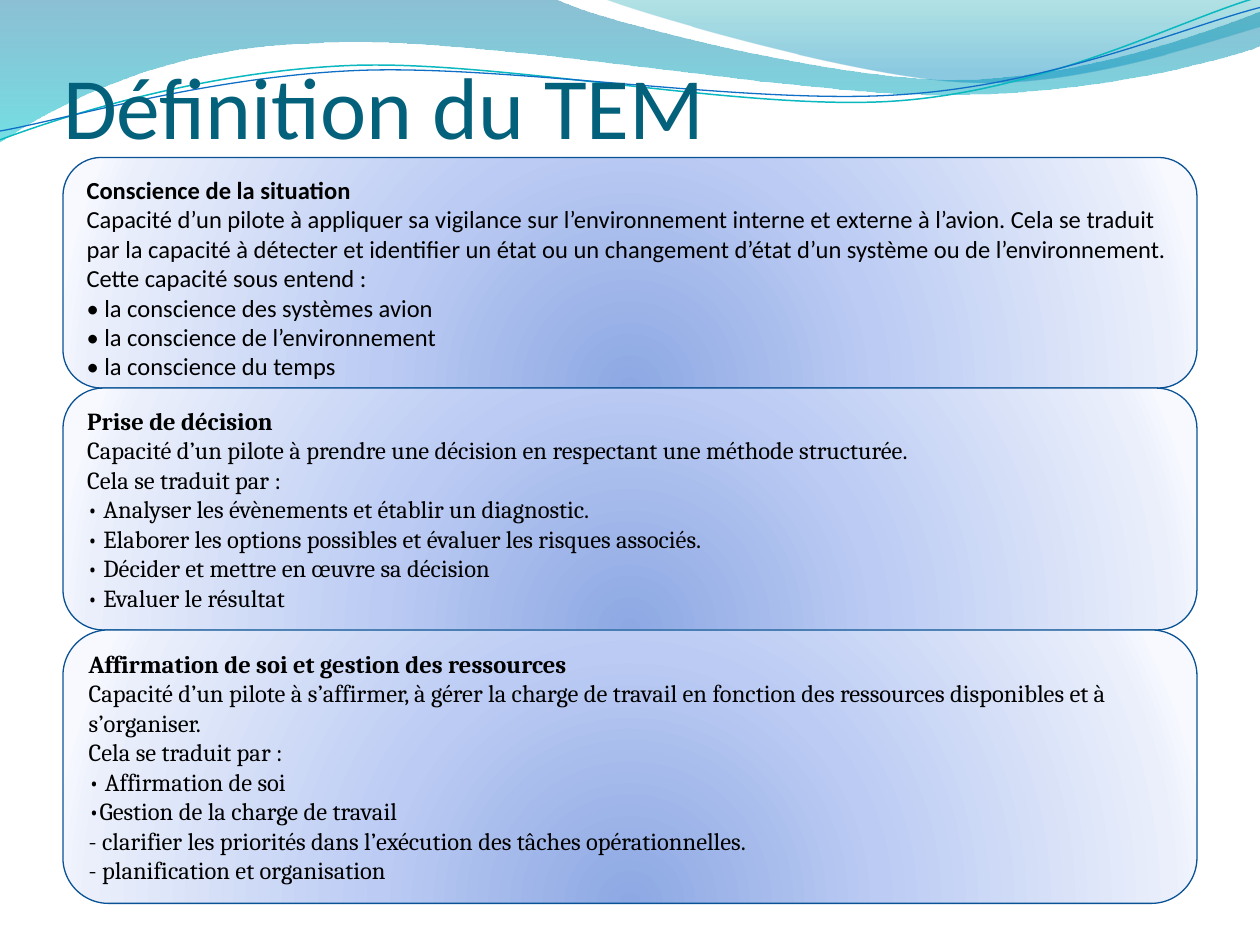
"""Build the slide « Définition du TEM »: wave header, title and three stacked definition panels."""
from math import cos, radians, sin

from pptx import Presentation
from pptx.dml.color import RGBColor as Rgb
from pptx.enum.shapes import MSO_SHAPE as Shape
from pptx.enum.text import MSO_ANCHOR as Anchor, MSO_AUTO_SIZE as AutoSize, PP_ALIGN as Align
from pptx.oxml import parse_xml
from pptx.oxml.ns import nsdecls, qn
from pptx.util import Inches, Pt

COLORS = {
    "title": "04617B", "text": "000000", "border": "095295",
    "teal_line": "0AB8BF", "blue_line": "0F6FC6",
    "deep": "0074A1", "aqua": "00C6CF", "teal": "00A1A9", "azure": "008BBF",
    "panel_core": "8DA8E3", "panel_mid": "BBCBF3", "panel_pale": "EAEFFB", "panel_edge": "F7F9FF",
}
LINEAR = '<a:lin ang="5400000" scaled="0"/>'
RADIAL = '<a:path path="circle"><a:fillToRect l="50000" t="130000" r="50000" b="-30000"/></a:path>'


def set_gradient(shape, stops, direction):
    shape.fill.background()
    stop_xml = ""
    for position, color, opacity in stops:
        alpha = f'<a:alpha val="{opacity * 1000}"/>' if opacity < 100 else ""
        stop_xml += (f'<a:gs pos="{position * 1000}"><a:srgbClr val="{COLORS[color]}">'
                     f'{alpha}</a:srgbClr></a:gs>')
    properties = shape._element.spPr
    properties.replace(properties.find(qn("a:noFill")), parse_xml(
        f'<a:gradFill {nsdecls("a")} rotWithShape="1"><a:gsLst>{stop_xml}</a:gsLst>{direction}</a:gradFill>'))


def add_wave(shapes, start, segments, closed, tilt=0, center=(0, 0)):
    points = [start] + [segment[i:i + 2] for segment in segments for i in range(0, len(segment), 2)]
    cx, cy = center
    turn = radians(-tilt)
    corners = [(Inches(cx + (x - cx) * cos(turn) - (y - cy) * sin(turn)),
                Inches(cy + (x - cx) * sin(turn) + (y - cy) * cos(turn))) for x, y in points]
    builder = shapes.build_freeform(*corners[0])
    builder.add_line_segments(corners[1:], close=closed)
    wave = builder.convert_to_shape()
    strokes = iter(list(wave._element.iter(qn("a:lnTo"))))
    for segment in segments:
        curve = next(strokes)
        if len(segment) == 6:
            curve.tag = qn("a:cubicBezTo")
            for _ in range(2):
                stroke = next(strokes)
                curve.append(stroke[0])
                stroke.getparent().remove(stroke)
    wave.rotation = tilt
    wave.shadow.inherit = False
    return wave


deck = Presentation()
deck.slide_width, deck.slide_height = Inches(10), Inches(7.5)
slide = deck.slides.add_slide(deck.slide_layouts[5])
shapes = slide.shapes
margin = int(deck.slide_width * 0.05)
content_width = deck.slide_width - 2 * margin

filled_waves = [
    ((0, 0), [(4.4, -0.01), (4.76, 0.17, 6.64, 0.63, 7.58, 0.63), (8.53, 0.63, 9.58, 0.26, 10, 0.09),
              (10.01, 0.36), (9.83, 0.44, 8.7, 0.76, 7.46, 0.75), (6.22, 0.75, 3.82, 0.28, 2.57, 0.34),
              (1.29, 0.36, 0.46, 0.83, -0.01, 1.13), (0, 0)],
     [(0, "deep", 45), (100, "aqua", 55)]),
    ((4.79, -0.01), [(5.09, 0.11, 6.82, 0.62, 7.69, 0.65), (8.56, 0.69, 9.61, 0.32, 10, 0.21),
                     (10, 0), (4.79, -0.01)],
     [(0, "teal", 30), (80, "azure", 45)]),
]
for start, segments, stops in filled_waves:
    wave = add_wave(shapes, start, segments, True)
    set_gradient(wave, stops, LINEAR)
    wave.line.fill.background()

line_waves = [
    ((0, 1.11), [(0.48, 0.93, 1.58, 0.57, 2.77, 0.52), (3.95, 0.47, 5.93, 0.89, 7.13, 0.8),
                 (8.33, 0.71, 9.38, 0.15, 9.98, -0.02)], (4.99, 0.58), "teal_line", 0.85),
    ((0, 1.04), [(0.47, 0.96, 1.64, 0.61, 2.83, 0.56), (4.03, 0.51, 5.97, 0.84, 7.17, 0.75),
                 (8.36, 0.67, 9.41, 0.21, 10, 0.06)], (5, 0.59), "blue_line", 0.75),
]
for start, segments, center, color, weight in line_waves:
    wave = add_wave(shapes, start, segments, False, -2.7, center)
    wave.fill.background()
    wave.line.color.rgb = Rgb.from_string(COLORS[color])
    wave.line.width = Pt(weight)

heading = shapes.title
shapes._spTree.append(heading._element)
heading.left, heading.top, heading.width, heading.height = margin, 0, content_width, Inches(1.25)
heading_frame = heading.text_frame
heading_frame.text = "Définition du TEM"
heading_format = {"auto_size": AutoSize.NONE, "vertical_anchor": Anchor.BOTTOM, "word_wrap": True,
                  "margin_left": 0, "margin_right": 0, "margin_top": Inches(0.05), "margin_bottom": 0}
for key, value in heading_format.items():
    setattr(heading_frame, key, value)
heading_frame.paragraphs[0].alignment = Align.LEFT
heading_font = heading_frame.paragraphs[0].runs[0].font
heading_font.name, heading_font.size = "Calibri", Pt(50)
heading_font.color.rgb = Rgb.from_string(COLORS["title"])

panels = [
    (1.83, 0.13, "Calibri", [
        "Conscience de la situation",
        "Capacité d’un pilote à appliquer sa vigilance sur l’environnement interne et externe à l’avion. "
        "Cela se traduit par la capacité à détecter et identifier un état ou un changement d’état "
        "d’un système ou de l’environnement.",
        "Cette capacité sous entend :",
        "• la conscience des systèmes avion",
        "• la conscience de l’environnement",
        "• la conscience du temps"]),
    (1.92, 0.05, "Cambria", [
        "Prise de décision",
        "Capacité d’un pilote à prendre une décision en respectant une méthode structurée.",
        "Cela se traduit par :",
        "• Analyser les évènements et établir un diagnostic.",
        "• Elaborer les options possibles et évaluer les risques associés.",
        "• Décider et mettre en œuvre sa décision",
        "• Evaluer le résultat"]),
    (2.17, 0.05, "Cambria", [
        "Affirmation de soi et gestion des ressources",
        "Capacité d’un pilote à s’affirmer, à gérer la charge de travail en fonction des ressources "
        "disponibles et à s’organiser.",
        "Cela se traduit par :",
        "• Affirmation de soi",
        "•Gestion de la charge de travail",
        "- clarifier les priorités dans l’exécution des tâches opérationnelles.",
        "- planification et organisation"]),
]
panel_stops = [(0, "panel_core", 100), (43, "panel_mid", 100),
               (93, "panel_pale", 100), (100, "panel_edge", 100)]
panel_top = Inches(1.25)
for height, inset_top, typeface, lines in panels:
    panel = shapes.add_shape(Shape.ROUNDED_RECTANGLE, margin, panel_top, content_width, Inches(height))
    panel_top += panel.height
    panel.shadow.inherit = False
    set_gradient(panel, panel_stops, RADIAL)
    panel.line.color.rgb = Rgb.from_string(COLORS["border"])
    panel.line.width = Pt(0.75)
    frame = panel.text_frame
    frame.word_wrap, frame.vertical_anchor = True, Anchor.MIDDLE
    frame.margin_top = Inches(inset_top)
    for number, line in enumerate(lines):
        paragraph = frame.paragraphs[0] if number == 0 else frame.add_paragraph()
        paragraph.alignment = Align.LEFT
        run = paragraph.add_run()
        run.text = line
        for key, value in {"name": typeface, "size": Pt(14), "bold": number == 0}.items():
            setattr(run.font, key, value)
        run.font.color.rgb = Rgb.from_string(COLORS["text"])

deck.save("out.pptx")
